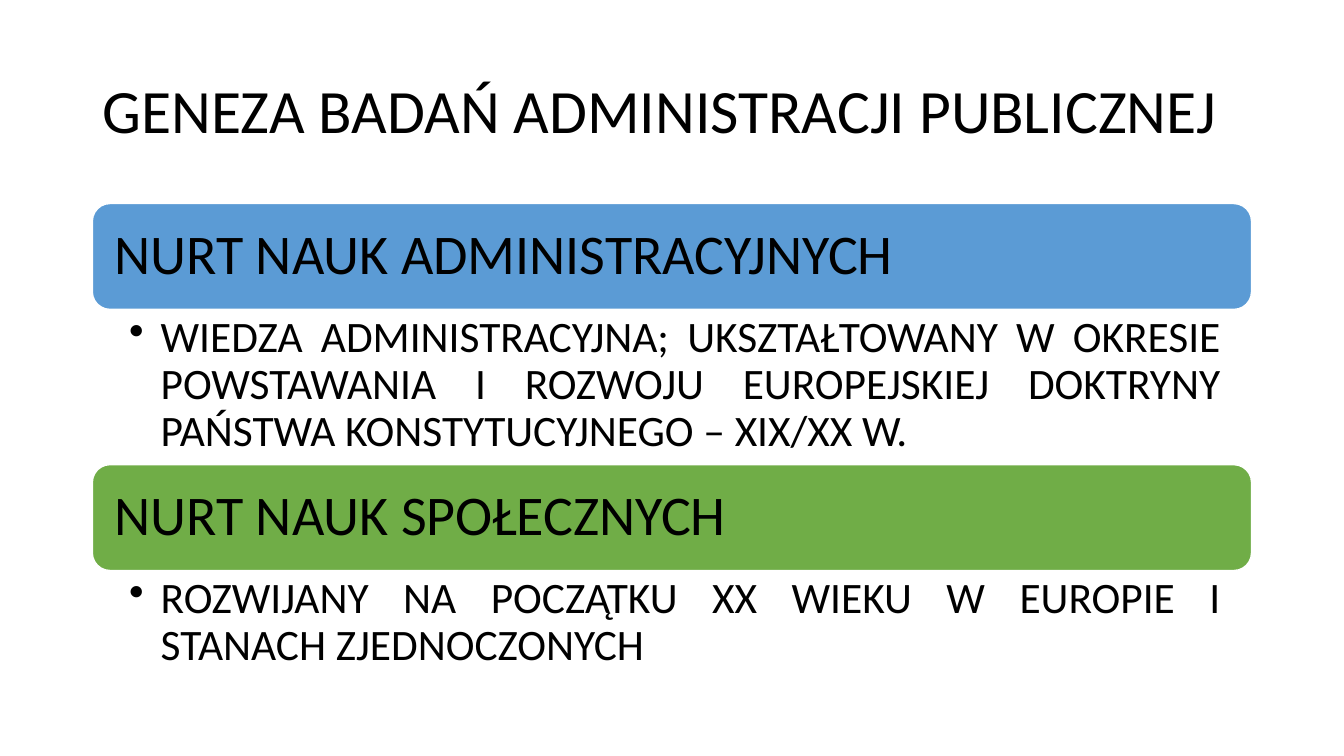
from lxml import etree
from pptx import Presentation
from pptx import util as u
from pptx.dml.color import RGBColor
from pptx.enum import shapes, text
from pptx.oxml.ns import qn

COLOURS = {"blue": "5B9BD5", "green": "70AD47", "white": "FFFFFF", "black": "000000"}
FONT = "Calibri"
LEFT, WIDTH, BAR_HEIGHT = 66, 828, 75.6
TRENDS = [
    ("NURT NAUK ADMINISTRACYJNYCH", "blue",
     "WIEDZA ADMINISTRACYJNA; UKSZTAŁTOWANY W OKRESIE POWSTAWANIA I ROZWOJU "
     "EUROPEJSKIEJ DOKTRYNY PAŃSTWA KONSTYTUCYJNEGO – XIX/XX W.", 110.9),
    ("NURT NAUK SPOŁECZNYCH", "green",
     "ROZWIJANY NA POCZĄTKU XX WIEKU W EUROPIE I STANACH ZJEDNOCZONYCH", 76.2),
]


def colour(name):
    """Return the named colour."""
    return RGBColor.from_string(COLOURS[name])


def write(box, words, size, align, anchor, insets):
    """Put one formatted paragraph in a box and return it."""
    frame = box.text_frame
    frame.text = words
    frame.word_wrap = True
    frame.auto_size = text.MSO_AUTO_SIZE.NONE
    frame.vertical_anchor = anchor
    frame.margin_left, frame.margin_top, frame.margin_right, frame.margin_bottom = map(u.Pt, insets)
    para = frame.paragraphs[0]
    para.alignment = align
    para.line_spacing = 0.9
    for span in para.runs:
        span.font.name = FONT
        span.font.size = u.Pt(size)
        span.font.color.rgb = colour("black")
    return para


def add_title(page, words):
    """Place and fill the title placeholder."""
    title = page.shapes.title
    title.left, title.top, title.width, title.height = map(u.Pt, (LEFT, 28.75, WIDTH, 104.4))
    write(title, words, 44, text.PP_ALIGN.LEFT, text.MSO_ANCHOR.MIDDLE, (7.2, 3.6, 7.2, 3.6))


def add_bar(page, words, fill, top):
    """Add a rounded heading bar."""
    bar = page.shapes.add_shape(shapes.MSO_SHAPE.ROUNDED_RECTANGLE,
                                *map(u.Pt, (LEFT, top, WIDTH, BAR_HEIGHT)))
    bar.shadow.inherit = False
    bar.fill.solid()
    bar.fill.fore_color.rgb = colour(fill)
    bar.line.color.rgb = colour("white")
    bar.line.width = u.Pt(1)
    write(bar, words, 40, text.PP_ALIGN.LEFT, text.MSO_ANCHOR.MIDDLE, (12, 12, 12, 12))


def add_bullet(page, words, top, height):
    """Add a justified bullet below a heading bar."""
    box = page.shapes.add_textbox(*map(u.Pt, (LEFT, top, WIDTH, height)))
    para = write(box, words, 31, text.PP_ALIGN.JUSTIFY, text.MSO_ANCHOR.TOP, (26.3, 4, 22.4, 4))
    para.level = 1
    props = para._p.get_or_add_pPr()
    props.set("marL", str(u.Pt(22.5)))
    props.set("indent", str(-u.Pt(22.5)))
    etree.SubElement(props, qn("a:buChar")).set("char", "•")


def main():
    """Build the slide and save the deck."""
    deck = Presentation()
    deck.slide_width, deck.slide_height = u.Pt(960), u.Pt(540)
    page = deck.slides.add_slide(deck.slide_layouts[5])
    add_title(page, "GENEZA BADAŃ ADMINISTRACJI PUBLICZNEJ")
    top = 145.4
    for heading, fill, words, height in TRENDS:
        add_bar(page, heading, fill, top)
        add_bullet(page, words, top + BAR_HEIGHT, height)
        top += BAR_HEIGHT + height
    deck.save("out.pptx")


if __name__ == "__main__":
    main()
